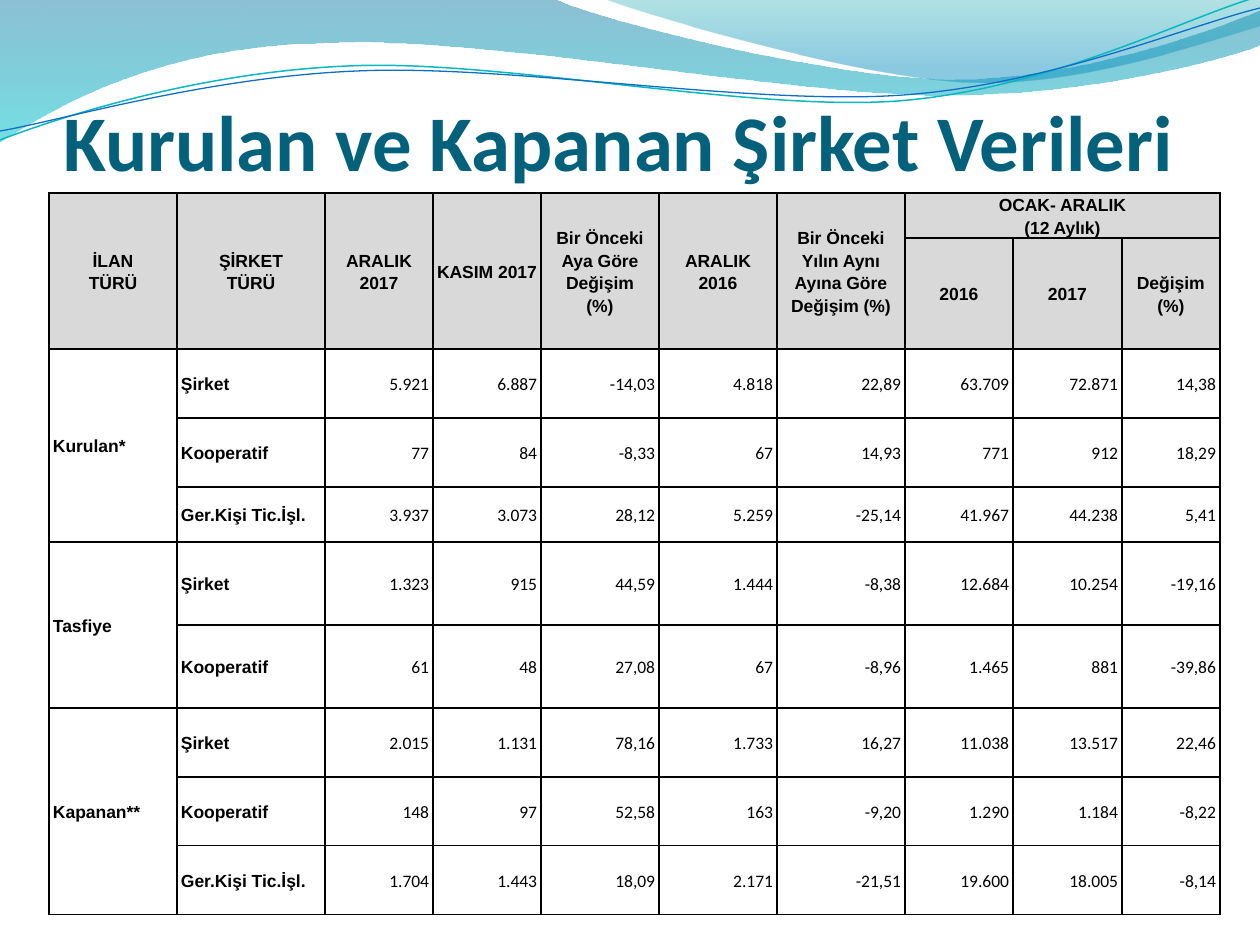
import math

import pptx
import pptx.dml.color
import pptx.enum.text
import pptx.oxml
import pptx.oxml.ns
import pptx.util

PX = 914400 / 126
STRAND_TILT = 2.7
STRAND_CENTER = (629, 73)

BLACK = pptx.dml.color.RGBColor(0x00, 0x00, 0x00)
HEADER_GREY = pptx.dml.color.RGBColor(0xD9, 0xD9, 0xD9)
TITLE_BLUE = pptx.dml.color.RGBColor(0x04, 0x61, 0x7B)
DEEP_BLUE = pptx.dml.color.RGBColor(0x00, 0x74, 0xA1)
CYAN = pptx.dml.color.RGBColor(0x00, 0xC6, 0xCF)
TEAL = pptx.dml.color.RGBColor(0x00, 0xA1, 0xA9)
SKY_BLUE = pptx.dml.color.RGBColor(0x00, 0x8B, 0xBF)
TEAL_LINE = pptx.dml.color.RGBColor(0x0A, 0xB8, 0xBF)
BLUE_LINE = pptx.dml.color.RGBColor(0x0F, 0x6F, 0xC6)

LEFT = pptx.enum.text.PP_ALIGN.LEFT
CENTER = pptx.enum.text.PP_ALIGN.CENTER
RIGHT = pptx.enum.text.PP_ALIGN.RIGHT

WIDE_WAVE = [
    [(0, 0)], [(554, -1)],
    [(600, 21), (837, 79), (955, 79)], [(1075, 79), (1207, 33), (1260, 11)],
    [(1261, 45)],
    [(1239, 55), (1096, 96), (940, 95)], [(784, 95), (481, 35), (324, 43)],
    [(163, 45), (58, 105), (-1, 142)],
]
RIGHT_WAVE = [
    [(604, -1)],
    [(641, 14), (859, 78), (969, 82)], [(1079, 87), (1211, 40), (1260, 26)],
    [(1260, 0)],
]
TEAL_STRAND = [
    [(0, 140)],
    [(60, 117), (199, 72), (349, 66)], [(498, 59), (747, 112), (898, 101)],
    [(1050, 89), (1182, 19), (1257, -3)],
]
BLUE_STRAND = [
    [(0, 131)],
    [(59, 121), (207, 77), (357, 71)], [(508, 64), (752, 106), (903, 95)],
    [(1053, 84), (1186, 26), (1260, 8)],
]

COLUMN_WIDTHS = [128, 148, 108, 108, 118, 118, 128, 108, 109, 98]
ROW_HEIGHTS = [35, 111, 69, 69, 55, 83, 83, 69, 69, 69]
TALL_HEADERS = [
    "İLAN\nTÜRÜ", "ŞİRKET\nTÜRÜ", "ARALIK 2017", "KASIM 2017",
    "Bir Önceki Aya Göre Değişim\n(%)", "ARALIK\n2016",
    "Bir Önceki Yılın Aynı Ayına Göre Değişim (%)",
]
PERIOD_HEADER = ["OCAK- ARALIK", "(12 Aylık)"]
PERIOD_COLUMNS = ["2016", "2017", "Değişim\n(%)"]
NOTICES = {
    "Kurulan*": [
        ("Şirket", "5.921 6.887 -14,03 4.818 22,89 63.709 72.871 14,38"),
        ("Kooperatif", "77 84 -8,33 67 14,93 771 912 18,29"),
        ("Ger.Kişi Tic.İşl.", "3.937 3.073 28,12 5.259 -25,14 41.967 44.238 5,41"),
    ],
    "Tasfiye": [
        ("Şirket", "1.323 915 44,59 1.444 -8,38 12.684 10.254 -19,16"),
        ("Kooperatif", "61 48 27,08 67 -8,96 1.465 881 -39,86"),
    ],
    "Kapanan**": [
        ("Şirket", "2.015 1.131 78,16 1.733 16,27 11.038 13.517 22,46"),
        ("Kooperatif", "148 97 52,58 163 -9,20 1.290 1.184 -8,22"),
        ("Ger.Kişi Tic.İşl.", "1.704 1.443 18,09 2.171 -21,51 19.600 18.005 -8,14"),
    ],
}


def px(length):
    return pptx.util.Emu(round(length * PX))


def level(point):
    angle = math.radians(STRAND_TILT)
    x, y = (value - center for value, center in zip(point, STRAND_CENTER))
    return (STRAND_CENTER[0] + x * math.cos(angle) - y * math.sin(angle),
            STRAND_CENTER[1] + x * math.sin(angle) + y * math.cos(angle))


def add_outline(slide, segments, close):
    start = segments[0][0]
    builder = slide.shapes.build_freeform(px(start[0]), px(start[1]))
    ends = [tuple(map(px, segment[-1])) for segment in segments[1:]]
    builder.add_line_segments(ends, close=close)
    outline = builder.convert_to_shape()
    outline.shadow.inherit = False
    steps = outline.element.spPr.findall(".//" + pptx.oxml.ns.qn("a:lnTo"))
    for step, segment in zip(steps, segments[1:]):
        if len(segment) == 3:
            points = "".join(
                f'<a:pt x="{px(x) - outline.left}" y="{px(y) - outline.top}"/>'
                for x, y in segment)
            step.getparent().replace(step, pptx.oxml.parse_xml(
                f'<a:cubicBezTo {pptx.oxml.ns.nsdecls("a")}>{points}</a:cubicBezTo>'))
    return outline


def add_wave(slide, segments, stops):
    wave = add_outline(slide, segments, True)
    wave.line.fill.background()
    wave.fill.gradient()
    wave.fill.gradient_angle = 270
    for stop, (position, color, _) in zip(wave.fill.gradient_stops, stops):
        stop.position = position
        stop.color.rgb = color
    tints = wave.element.spPr.findall(".//" + pptx.oxml.ns.qn("a:srgbClr"))
    for tint, (_, _, opacity) in zip(tints, stops):
        tint.append(pptx.oxml.parse_xml(
            f'<a:alpha {pptx.oxml.ns.nsdecls("a")} val="{opacity * 1000}"/>'))


def add_strand(slide, segments, color, width):
    leveled = [[level(point) for point in segment] for segment in segments]
    strand = add_outline(slide, leveled, False)
    strand.rotation = -STRAND_TILT
    strand.fill.background()
    strand.line.color.rgb = color
    strand.line.width = pptx.util.Pt(width)


def add_run(paragraph, text, font, size, color, bold):
    run = paragraph.add_run()
    run.text = text
    run.font.name = font
    run.font.size = pptx.util.Pt(size)
    run.font.color.rgb = color
    run.font.bold = bold


def set_title(slide, text):
    title = slide.shapes.title
    slide.shapes.element.append(title.element)
    title.left, title.top, title.width, title.height = map(px, (63, 97, 1144, 90))
    frame = title.text_frame
    frame.auto_size = pptx.enum.text.MSO_AUTO_SIZE.NONE
    frame.vertical_anchor = pptx.enum.text.MSO_ANCHOR.BOTTOM
    frame.margin_left = frame.margin_right = frame.margin_bottom = 0
    frame.margin_top = px(6)
    frame.paragraphs[0].alignment = LEFT
    add_run(frame.paragraphs[0], text, "Calibri", 45, TITLE_BLUE, True)


def set_borders(cell):
    properties = cell._tc.get_or_add_tcPr()
    for side in ("lnL", "lnR", "lnT", "lnB"):
        properties.append(pptx.oxml.parse_xml(
            f'<a:{side} {pptx.oxml.ns.nsdecls("a")} w="12700"><a:solidFill>'
            f'<a:srgbClr val="{BLACK}"/></a:solidFill></a:{side}>'))


def write_cell(cell, paragraphs, alignment, font="Arial", bold=True):
    for index, text in enumerate(paragraphs):
        frame = cell.text_frame
        paragraph = frame.add_paragraph() if index else frame.paragraphs[0]
        paragraph.alignment = alignment
        paragraph.line_spacing = 1.15
        for number, line in enumerate(text.split("\n")):
            if number:
                paragraph.add_line_break()
            add_run(paragraph, line, font, 10, BLACK, bold)


def add_company_table(slide):
    frame = slide.shapes.add_table(
        len(ROW_HEIGHTS), len(COLUMN_WIDTHS), px(49), px(193),
        px(sum(COLUMN_WIDTHS)), px(sum(ROW_HEIGHTS)))
    table = frame.table
    table.first_row = table.horz_banding = False
    for column, width in zip(table.columns, COLUMN_WIDTHS):
        column.width = px(width)
    for number, (row, height) in enumerate(zip(table.rows, ROW_HEIGHTS)):
        row.height = px(height)
        for cell in row.cells:
            set_borders(cell)
            cell.margin_left = cell.margin_right = px(4)
            cell.margin_top = cell.margin_bottom = 0
            cell.vertical_anchor = pptx.enum.text.MSO_ANCHOR.MIDDLE
            if number < 2:
                cell.fill.solid()
                cell.fill.fore_color.rgb = HEADER_GREY
            else:
                cell.fill.background()

    for column, header in enumerate(TALL_HEADERS):
        table.cell(0, column).merge(table.cell(1, column))
        write_cell(table.cell(0, column), [header], CENTER)
    table.cell(0, 7).merge(table.cell(0, 9))
    write_cell(table.cell(0, 7), PERIOD_HEADER, CENTER)
    for column, header in enumerate(PERIOD_COLUMNS, 7):
        write_cell(table.cell(1, column), [header], CENTER)

    row = 2
    for notice, companies in NOTICES.items():
        table.cell(row, 0).merge(table.cell(row + len(companies) - 1, 0))
        write_cell(table.cell(row, 0), [notice], LEFT)
        for company, figures in companies:
            write_cell(table.cell(row, 1), [company], LEFT)
            for column, figure in enumerate(figures.split(), 2):
                write_cell(table.cell(row, column), [figure], RIGHT, "Calibri", False)
            row += 1


def main():
    deck = pptx.Presentation()
    deck.slide_width, deck.slide_height = px(1260), px(945)
    slide = deck.slides.add_slide(deck.slide_layouts[5])
    add_wave(slide, WIDE_WAVE, [(0, DEEP_BLUE, 45), (1, CYAN, 55)])
    add_wave(slide, RIGHT_WAVE, [(0, TEAL, 30), (0.8, SKY_BLUE, 45)])
    add_strand(slide, TEAL_STRAND, TEAL_LINE, 0.85)
    add_strand(slide, BLUE_STRAND, BLUE_LINE, 0.75)
    set_title(slide, "Kurulan ve Kapanan Şirket Verileri")
    add_company_table(slide)
    deck.save("out.pptx")


if __name__ == "__main__":
    main()
